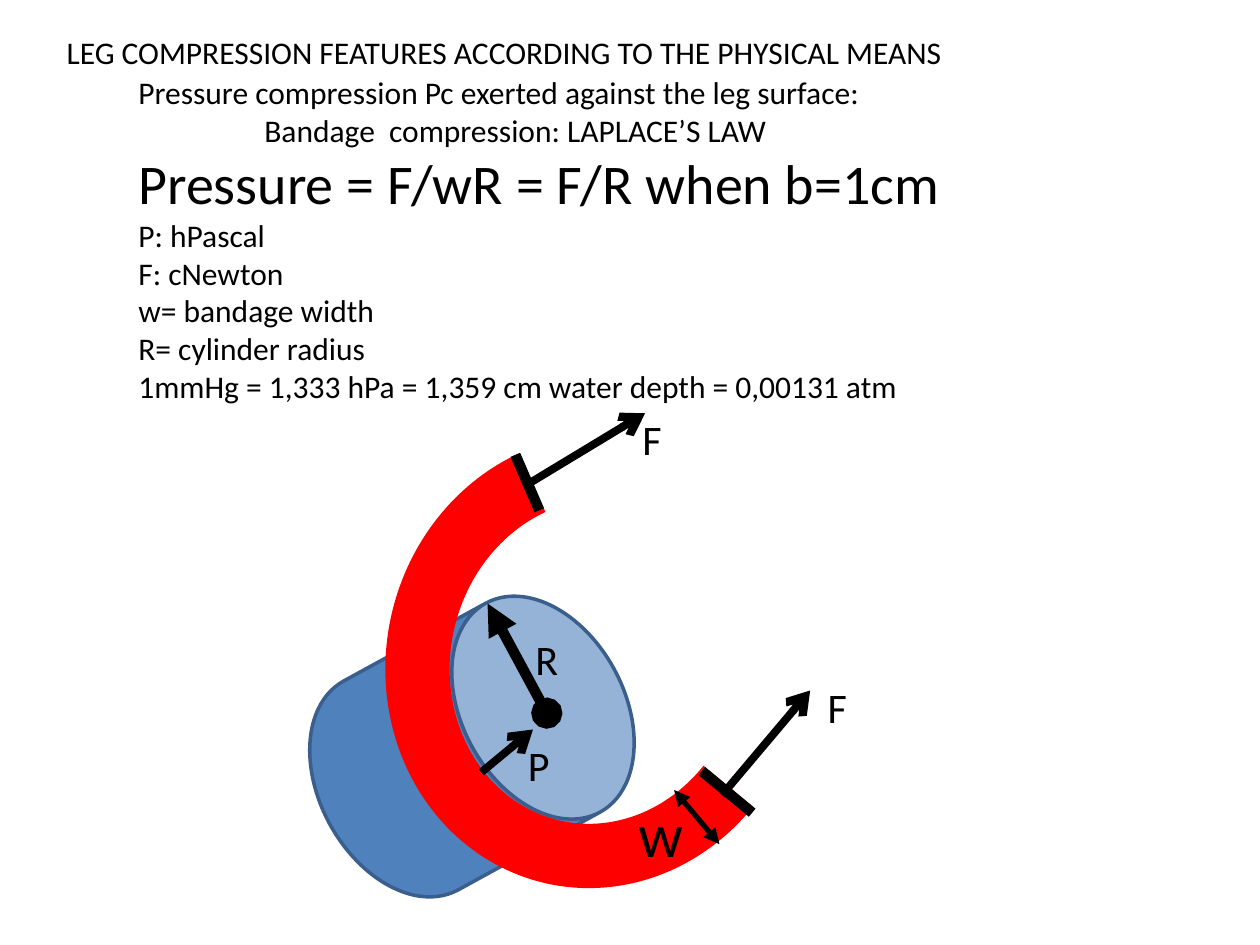
from pptx import Presentation
from pptx.dml.color import RGBColor
from pptx.enum.shapes import MSO_CONNECTOR as Connector, MSO_SHAPE as Shape
from pptx.enum.text import MSO_AUTO_SIZE as AutoSize
from pptx.oxml import parse_xml
from pptx.oxml.ns import nsdecls, qn
from pptx.util import Inches, Pt

BLACK = "000000"
RED = "FF0000"
BLUE = "4F81BD"
DARK_BLUE = "3A5F8C"


def color(hex_string):
    """Turn a hex string into a colour."""
    return RGBColor.from_string(hex_string)


class SlideBuilder:
    """Hold the text style and the current slide."""

    def __init__(self, slide, font="Calibri", ink=BLACK, tab=Inches(1)):
        self.slide = slide
        self.font = font
        self.ink = ink
        self.tab = tab

    def text(self, left, top, width, height, lines, wrap=True):
        """Add a text box from (text, size) lines."""
        box = self.slide.shapes.add_textbox(
            Inches(left), Inches(top), Inches(width), Inches(height))
        frame = box.text_frame
        frame.word_wrap = wrap
        frame.auto_size = AutoSize.SHAPE_TO_FIT_TEXT
        for index, (content, size) in enumerate(lines):
            paragraph = frame.add_paragraph() if index else frame.paragraphs[0]
            paragraph.text = content
            paragraph.font.name = self.font
            paragraph.font.size = Pt(size)
            paragraph.font.color.rgb = color(self.ink)
            paragraph._p.get_or_add_pPr().set("defTabSz", str(self.tab))

    def label(self, left, top, width, height, content, size=24):
        """Add a one-line label."""
        self.text(left, top, width, height, [(content, size)], wrap=False)

    def shape(self, kind, left, top, width, height, rotation, adjustments,
              line, line_width, fill=None):
        """Add a rotated preset shape."""
        shape = self.slide.shapes.add_shape(
            kind, Inches(left), Inches(top), Inches(width), Inches(height))
        shape.rotation = rotation
        shape.shadow.inherit = False
        for index, value in enumerate(adjustments):
            shape.adjustments[index] = value
        if fill:
            shape.fill.solid()
            shape.fill.fore_color.rgb = color(fill)
        else:
            shape.fill.background()
        shape.line.color.rgb = color(line)
        shape.line.width = Pt(line_width)

    def line(self, start, end, width, head=None, tail=None):
        """Add a straight line with optional ends."""
        connector = self.slide.shapes.add_connector(
            Connector.STRAIGHT, *map(Inches, start + end))
        connector.line.color.rgb = color(self.ink)
        connector.line.width = Pt(width)
        properties = connector.element.find(qn("p:spPr"))
        outline = properties.find(qn("a:ln"))
        for tag, ending in (("headEnd", head), ("tailEnd", tail)):
            if ending:
                outline.append(parse_xml(
                    f'<a:{tag} {nsdecls("a")} type="{ending}"/>'))
        properties.append(parse_xml(f'<a:effectLst {nsdecls("a")}/>'))


def arc_angle(degrees):
    """Convert degrees to an arc adjustment value."""
    return degrees * 60000 / 100000


def main():
    """Build the leg compression slide."""
    presentation = Presentation()
    presentation.slide_width = Inches(10)
    presentation.slide_height = Inches(7.5)
    slide = presentation.slides.add_slide(presentation.slide_layouts[6])
    builder = SlideBuilder(slide)

    builder.text(1, 0.53, 8.34, 3.06, [
        ("Pressure compression Pc exerted against the leg surface:", 18),
        ("\tBandage  compression: LAPLACE’S LAW", 18),
        ("Pressure = F/wR\t= F/R when b=1cm", 32),
        ("P: hPascal", 18),
        ("F: cNewton", 18),
        ("w= bandage width", 18),
        ("R= cylinder radius", 18),
        ("1mmHg = 1,333 hPa = 1,359 cm water depth = 0,00131 atm", 18),
    ])

    builder.shape(Shape.CAN, 2.8, 4.64, 1.89, 2.57, 61.3, [0.68],
                  DARK_BLUE, 2, fill=BLUE)
    builder.shape(Shape.ARC, 3.18, 3.84, 3.1, 2.82, 102.5,
                  [arc_angle(300.84), arc_angle(147.63)], RED, 36.75)

    builder.line((4.34, 5.66), (3.87, 4.79), 6, head="oval", tail="triangle")
    builder.line((5.35, 6.27), (5.71, 6.7), 3, head="triangle", tail="triangle")

    builder.label(4.97, 6.26, 0.56, 0.71, "w", size=36)
    builder.label(4.15, 4.98, 0.38, 0.5, "R")
    for left, top in ((6.47, 5.36), (5, 3.23)):
        builder.label(left, top, 0.36, 0.5, "F")

    forces = [
        ((4.21, 3.83), (5.12, 3.28)),
        ((3.82, 6.13), (4.23, 5.79)),
        ((5.73, 6.31), (6.43, 5.48)),
    ]
    for start, end in forces:
        builder.line(start, end, 4.5, tail="arrow")
    builder.label(4.09, 5.82, 0.38, 0.5, "P")

    bandage_ends = [((5.57, 6.12), (5.97, 6.45)), ((4.09, 3.61), (4.28, 4.05))]
    for start, end in bandage_ends:
        builder.line(start, end, 6)

    builder.text(0.43, 0.21, 9.25, 0.4, [
        ("LEG COMPRESSION FEATURES ACCORDING TO THE PHYSICAL MEANS", 18)])

    presentation.save("out.pptx")


if __name__ == "__main__":
    main()
